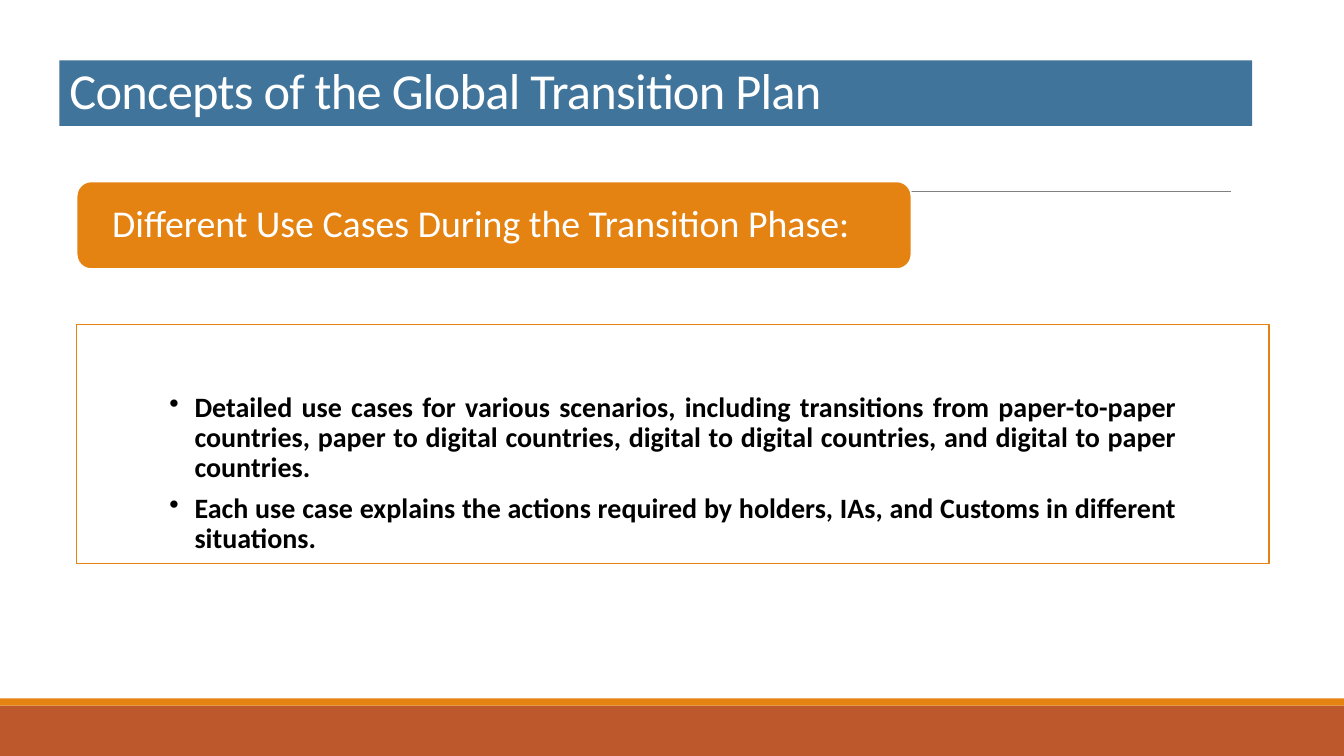
from lxml import etree
from pptx import Presentation, util as u
from pptx.dml.color import RGBColor
from pptx.enum import shapes, text
from pptx.oxml.ns import qn

PX = 9144  # EMU per px, 100 px to the inch
THEME = {
    "font": "Calibri",
    "blue": "40749B", "orange": "E48312", "rust": "BD582C",
    "white": "FFFFFF", "black": "000000", "grey": "808080",
    "title": 36, "heading": 27, "body": 20,
}


def add_block(box, fill, outline=None, kind=shapes.MSO_SHAPE.RECTANGLE):
    """Add a filled shape; box is left, top, width, height in px."""
    shape = slide.shapes.add_shape(kind, *(value * PX for value in box))
    shape.shadow.inherit = False
    shape.fill.solid()
    shape.fill.fore_color.rgb = RGBColor.from_string(THEME[fill])
    if outline:
        shape.line.color.rgb = RGBColor.from_string(THEME[outline])
        shape.line.width = u.Pt(1.25)
    else:
        shape.line.fill.background()
    return shape


def write(shape, content, size, color, margins, anchor):
    """Fill a shape with text; margins are left, top, right, bottom in px."""
    frame = shape.text_frame
    frame.word_wrap = True
    frame.vertical_anchor = anchor
    (frame.margin_left, frame.margin_top,
     frame.margin_right, frame.margin_bottom) = (value * PX for value in margins)
    frame.text = content
    for paragraph in frame.paragraphs:
        paragraph.alignment = text.PP_ALIGN.LEFT
        paragraph.line_spacing = 0.9
        for run in paragraph.runs:
            run.font.name = THEME["font"]
            run.font.size = u.Pt(THEME[size])
            run.font.color.rgb = RGBColor.from_string(THEME[color])
    return frame.paragraphs


presentation = Presentation()
presentation.slide_width = 1333 * PX
presentation.slide_height = 750 * PX
slide = presentation.slides.add_slide(presentation.slide_layouts[6])

# Footer bands and rule
add_block((0, 700, 1333, 50), "rust")
add_block((0, 693, 1333, 7), "orange")
rule = slide.shapes.add_connector(
    shapes.MSO_CONNECTOR.STRAIGHT, 131 * PX, 190 * PX, 1221 * PX, 190 * PX)
rule.line.color.rgb = RGBColor.from_string(THEME["grey"])
rule.line.width = u.Pt(0.5)
etree.SubElement(rule._element.spPr, qn("a:effectLst"))

# Title
title = add_block((59, 60, 1183, 65), "blue")
title_paragraphs = write(title, "Concepts of the Global Transition Plan",
                         "title", "white", (10, 5, 10, 5), text.MSO_ANCHOR.MIDDLE)
title_paragraphs[0].runs[0].font._element.set("spc", "-50")

# Use cases
use_cases = [
    "Detailed use cases for various scenarios, including transitions from "
    "paper-to-paper countries, paper to digital countries, digital to digital "
    "countries, and digital to paper countries.",
    "Each use case explains the actions required by holders, IAs, and Customs "
    "in different situations.",
]
panel = add_block((76, 322, 1183, 237), "white", "orange")
for paragraph in write(panel, "\n".join(use_cases), "body", "black",
                       (92, 68, 92, 3), text.MSO_ANCHOR.TOP):
    paragraph.alignment = text.PP_ALIGN.JUSTIFY
    paragraph.space_after = u.Pt(7.5)
    properties = paragraph._p.get_or_add_pPr()
    properties.set("marL", str(25 * PX))
    properties.set("indent", str(-25 * PX))
    etree.SubElement(properties, qn("a:buChar"), char="•")
    paragraph.runs[0].font.bold = True

# Heading
heading = add_block((76, 180, 828, 87), "orange", "white",
                    shapes.MSO_SHAPE.ROUNDED_RECTANGLE)
write(heading, "Different Use Cases During the Transition Phase:",
      "heading", "white", (31, 0, 31, 0), text.MSO_ANCHOR.MIDDLE)

presentation.save("out.pptx")
